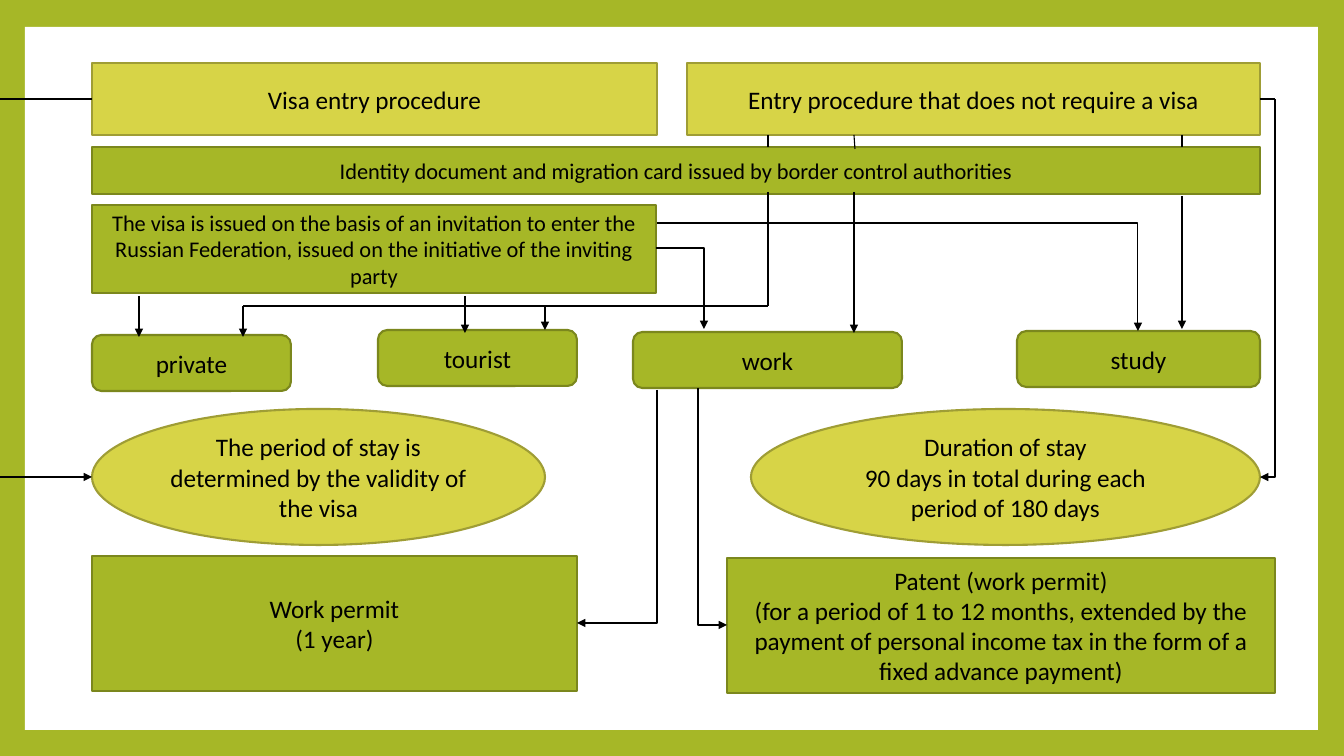
import pptx
import pptx.util
import pptx.dml.color
import pptx.enum.shapes
import pptx.enum.text
import pptx.oxml
import pptx.oxml.ns

EMU_PER_PX = 914400 / 100.8
GREEN, GREEN_EDGE = "A6B727", "7B871D"
LIME, LIME_EDGE = "D7D447", "9F9D35"
SHAPES = pptx.enum.shapes.MSO_SHAPE
CONNECTORS = pptx.enum.shapes.MSO_CONNECTOR
LEFT_SIDE, RIGHT_SIDE = 1, 3


def px(length):
    return pptx.util.Emu(round(length * EMU_PER_PX))


def color(value):
    return pptx.dml.color.RGBColor.from_string(value)


def add_box(page, kind, left, top, width, height, fill, edge=None, text="", size=18):
    box = page.shapes.add_shape(kind, px(left), px(top), px(width), px(height))
    box.shadow.inherit = False
    box.fill.solid()
    box.fill.fore_color.rgb = color(fill)
    if edge:
        box.line.color.rgb = color(edge)
        box.line.width = pptx.util.Pt(1.5)
    else:
        box.line.fill.background()
    if text:
        frame = box.text_frame
        frame.text = text
        frame.word_wrap = True
        frame.vertical_anchor = pptx.enum.text.MSO_ANCHOR.MIDDLE
        for para in frame.paragraphs:
            para.alignment = pptx.enum.text.PP_ALIGN.CENTER
            para.font.name = "Calibri"
            para.font.size = pptx.util.Pt(size)
            para.font.color.rgb = color("000000")
    return box


def add_link(page, start, end, arrow=False, kind=CONNECTORS.STRAIGHT):
    link = page.shapes.add_connector(kind, *map(px, start + end))
    link.line.color.rgb = color("000000")
    link.line.width = pptx.util.Pt(0.79)
    properties = link._element.spPr
    if arrow:
        tail = pptx.oxml.parse_xml(
            f'<a:tailEnd {pptx.oxml.ns.nsdecls("a")} type="triangle"/>')
        link.line._get_or_add_ln().append(tail)
    properties.append(pptx.oxml.parse_xml(f'<a:effectLst {pptx.oxml.ns.nsdecls("a")}/>'))
    return link


def add_elbow(page, start, end, down_first=False):
    """One-bend arrow; down_first leaves downwards and arrives sideways."""
    link = add_link(page, start, end, True, CONNECTORS.ELBOW)
    properties = link._element.spPr
    properties.find(pptx.oxml.ns.qn("a:prstGeom")).set("prst", "bentConnector2")
    if down_first:
        # Swap width and height about the centre, then turn the bend
        across, down = end[0] - start[0], end[1] - start[1]
        link.left = px((start[0] + end[0] - down) / 2)
        link.top = px((start[1] + end[1] - abs(across)) / 2)
        link.width, link.height = px(down), px(abs(across))
        turn = properties.find(pptx.oxml.ns.qn("a:xfrm"))
        turn.set("rot", str((90 if across < 0 else 270) * 60000))
        turn.set("flipH", "0" if across < 0 else "1")
    return link


def draw_frame(page, left, top, width, height):
    page.background.fill.solid()
    page.background.fill.fore_color.rgb = color(GREEN)
    add_box(page, SHAPES.RECTANGLE, left, top, width, height, "FFFFFF")


def draw_entry_rules(page, left, top, width):
    visa = add_box(page, SHAPES.RECTANGLE, left, top, 565, 72, LIME, LIME_EDGE,
                   "Visa entry procedure")
    visa_free = add_box(page, SHAPES.RECTANGLE, left + width - 573, top, 573, 72,
                        LIME, LIME_EDGE, "Entry procedure that does not require a visa")
    add_box(page, SHAPES.RECTANGLE, left, top + 84, width, 47, GREEN, GREEN_EDGE,
            "Identity document and migration card issued by border control authorities", 16)
    add_box(page, SHAPES.RECTANGLE, left, top + 142, 564, 88, GREEN, GREEN_EDGE,
            "The visa is issued on the basis of an invitation to enter the Russian "
            "Federation, issued on the initiative of the inviting party", 16)
    return visa, visa_free


def draw_purposes(page, left, top):
    for text, across, down, width in (("private", 0, 5, 199), ("tourist", 286, 0, 199),
                                      ("work", 541, 2, 269), ("study", 925, 1, 243)):
        add_box(page, SHAPES.ROUNDED_RECTANGLE, left + across, top + down, width, 56,
                GREEN, GREEN_EDGE, text)


def draw_stay_periods(page, left, top, width, height):
    add_box(page, SHAPES.OVAL, left, top, 453, height, LIME, LIME_EDGE,
            "The period of stay is determined by the validity of the visa")
    add_box(page, SHAPES.OVAL, left + width - 509, top, 509, height, LIME, LIME_EDGE,
            "Duration of stay\n90 days in total during each period of 180 days")


def draw_permits(page, left, top, width, height):
    add_box(page, SHAPES.RECTANGLE, left, top, 485, height, GREEN, GREEN_EDGE,
            "Work permit\n(1 year)")
    add_box(page, SHAPES.RECTANGLE, left + width - 548, top + 2, 548, height,
            GREEN, GREEN_EDGE,
            "Patent (work permit)\n(for a period of 1 to 12 months, extended by the "
            "payment of personal income tax in the form of a fixed advance payment)")


def draw_links(page, left, top, visa, visa_free):
    def at(across, down):
        return left + across, top + down

    # Plain lines, through the identity document bar and along the branch
    for start, end in ((at(676, 72), at(676, 84)), (at(762, 72), at(763, 86)),
                       (at(1090, 72), at(1090, 84)), (at(676, 129), at(676, 243)),
                       (at(676, 243), at(151, 243))):
        add_link(page, start, end)

    # Arrows down to the purposes of entry
    for across, start, end in ((47, 233, 274), (151, 243, 274), (373, 233, 270),
                               (453, 243, 267), (762, 129, 270), (1090, 133, 266)):
        add_link(page, at(across, start), at(across, end), arrow=True)
    add_elbow(page, at(564, 185), at(612, 266))
    add_elbow(page, at(565, 160), at(1046, 268))

    # From work to the permits
    add_elbow(page, at(565, 327), at(485, 560), down_first=True)
    add_elbow(page, at(606, 325), at(635, 562), down_first=True)

    # From the entry procedures to the periods of stay
    add_link(page, (0, top + 36), at(0, 36)).end_connect(visa, LEFT_SIDE)
    add_link(page, (0, top + 414), at(0, 414), arrow=True)
    add_link(page, at(1168, 36), at(1183, 36)).begin_connect(visa_free, RIGHT_SIDE)
    add_elbow(page, at(1183, 36), at(1168, 414), down_first=True)


def main():
    deck = pptx.Presentation()
    deck.slide_width, deck.slide_height = px(1344), px(756)
    page = deck.slides.add_slide(deck.slide_layouts[6])
    draw_frame(page, 25, 27, 1293, 703)
    visa, visa_free = draw_entry_rules(page, 92, 63, 1168)
    draw_purposes(page, 92, 330)
    draw_stay_periods(page, 92, 409, 1168, 136)
    draw_permits(page, 92, 556, 1183, 135)
    draw_links(page, 92, 63, visa, visa_free)
    deck.save("out.pptx")


if __name__ == "__main__":
    main()
